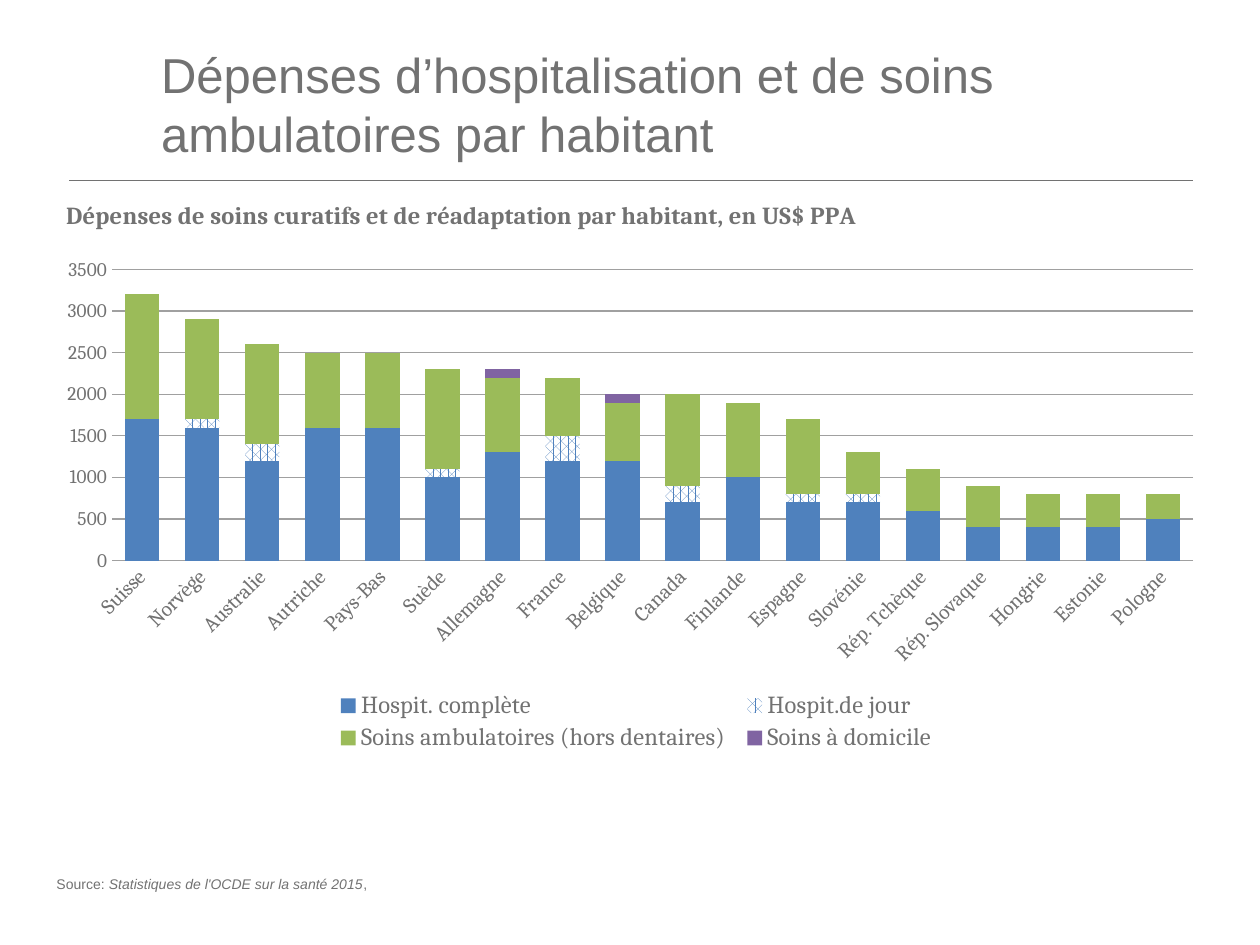
from lxml.etree import SubElement
from pptx import Presentation
from pptx.chart.data import CategoryChartData
from pptx.dml.color import RGBColor
from pptx.enum.chart import XL_CHART_TYPE, XL_LEGEND_POSITION, XL_TICK_MARK
from pptx.enum.dml import MSO_PATTERN
from pptx.enum.shapes import MSO_CONNECTOR
from pptx.enum.text import MSO_ANCHOR, MSO_AUTO_SIZE
from pptx.oxml import parse_xml
from pptx.oxml.ns import nsdecls, qn
from pptx.util import Inches, Pt

GREY = RGBColor(0x72, 0x72, 0x72)
GRID = RGBColor(0xA0, 0xA0, 0xA0)
WHITE = RGBColor(0xFF, 0xFF, 0xFF)
BLUE = RGBColor(0x4F, 0x81, 0xBD)
GREEN = RGBColor(0x9B, 0xBB, 0x59)
PURPLE = RGBColor(0x80, 0x64, 0xA2)

LEFT, TOP, WIDE, HIGH = 0.35, 1.48, 9.3, 4.54  # chart frame, inches

ROWS = [
    # country, full stay, day stay, outpatient, home care
    ("Suisse", 1700, 0, 1500, 0),
    ("Norvège", 1600, 100, 1200, 0),
    ("Australie", 1200, 200, 1200, 0),
    ("Autriche", 1600, 0, 900, 0),
    ("Pays-Bas", 1600, 0, 900, 0),
    ("Suède", 1000, 100, 1200, 0),
    ("Allemagne", 1300, 0, 900, 100),
    ("France", 1200, 300, 700, 0),
    ("Belgique", 1200, 0, 700, 100),
    ("Canada", 700, 200, 1100, 0),
    ("Finlande", 1000, 0, 900, 0),
    ("Espagne", 700, 100, 900, 0),
    ("Slovénie", 700, 100, 500, 0),
    ("Rép. Tchèque", 600, 0, 500, 0),
    ("Rép. Slovaque", 400, 0, 500, 0),
    ("Hongrie", 400, 0, 400, 0),
    ("Estonie", 400, 0, 400, 0),
    ("Pologne", 500, 0, 300, 0),
]
NAMES = ["Hospit. complète", "Hospit.de jour",
         "Soins ambulatoires (hors dentaires)", "Soins à domicile"]


def style(font, size, face="Cambria", bold=False):
    font.size, font.name, font.bold = Pt(size), face, bold
    font.color.rgb = GREY


def place(part, after, x, y, w=None, h=None):
    """Lay out a chart part at a spot given in inches on the slide."""
    for old in part.findall(qn("c:layout")):
        part.remove(old)
    layout = parse_xml(f'<c:layout {nsdecls("c")}/>')
    manual = SubElement(layout, qn("c:manualLayout"))
    if part.tag == qn("c:plotArea"):
        SubElement(manual, qn("c:layoutTarget")).set("val", "inner")
    for key in "xy":
        SubElement(manual, qn(f"c:{key}Mode")).set("val", "edge")
    share = {"x": (x - LEFT) / WIDE, "y": (y - TOP) / HIGH}
    if w:
        share.update(w=w / WIDE, h=h / HIGH)
    for key, val in share.items():
        SubElement(manual, qn(f"c:{key}")).set("val", str(val))
    if after is None:
        part.insert(0, layout)
    else:
        part.find(qn(after)).addnext(layout)


prs = Presentation()
prs.slide_width, prs.slide_height = Inches(10), Inches(7.5)
slide = prs.slides.add_slide(prs.slide_layouts[6])
shapes = slide.shapes

# Heading and rule
rule = shapes.add_connector(MSO_CONNECTOR.STRAIGHT, Inches(0.55), Inches(1.43),
                            Inches(9.47), Inches(1.43))
rule.line.color.rgb, rule.line.width = GREY, Pt(0.5)
SubElement(rule._element.spPr, qn("a:effectLst"))

head = shapes.add_textbox(Inches(1.18), Inches(0.26), Inches(8.11), Inches(1.12))
frame = head.text_frame
frame.word_wrap, frame.vertical_anchor = True, MSO_ANCHOR.MIDDLE
frame.text = "Dépenses d’hospitalisation et de soins ambulatoires par habitant"
style(frame.paragraphs[0].runs[0].font, 28, "Arial")

# Stacked columns
data = CategoryChartData(number_format="0")
data.categories = [row[0] for row in ROWS]
for col, name in enumerate(NAMES, 1):
    data.add_series(name, [row[col] for row in ROWS])
chart = shapes.add_chart(XL_CHART_TYPE.COLUMN_STACKED, Inches(LEFT), Inches(TOP),
                         Inches(WIDE), Inches(HIGH), data).chart
style(chart.font, 10)

plot = chart.plots[0]
plot.gap_width, plot.overlap, plot.vary_by_categories = 75, 100, False
for series, color in zip(plot.series, (BLUE, None, GREEN, PURPLE)):
    fill = series.format.fill
    if color is None:
        fill.patterned()
        fill.pattern = MSO_PATTERN.PERCENT_60
        fill.fore_color.rgb, fill.back_color.rgb = BLUE, WHITE
    else:
        fill.solid()
        fill.fore_color.rgb = color

chart.has_title = True
title = chart.chart_title
title.include_in_layout = False
title.text_frame.text = "Dépenses de soins curatifs et de réadaptation par habitant, en US$ PPA"
style(title.text_frame.paragraphs[0].runs[0].font, 14, bold=True)

cats, vals = chart.category_axis, chart.value_axis
for axis, size in ((cats, 12), (vals, 11)):
    axis.major_tick_mark = axis.minor_tick_mark = XL_TICK_MARK.NONE
    style(axis.tick_labels.font, size)
cats.format.line.color.rgb = GRID
cats._element.find(qn("c:txPr")).find(qn("a:bodyPr")).set("rot", "-2700000")
vals.minimum_scale, vals.maximum_scale, vals.major_unit = 0, 3500, 500
vals.tick_labels.number_format = "0"
vals.tick_labels.number_format_is_linked = False
vals.format.line.fill.background()
vals.major_gridlines.format.line.color.rgb = GRID
vals.major_gridlines.format.line.width = Pt(0.75)

chart.has_legend = True
legend = chart.legend
legend.position, legend.include_in_layout = XL_LEGEND_POSITION.BOTTOM, False
style(legend.font, 14)

place(title._element, "c:tx", 0.49, 1.55)
place(plot._element.getparent(), None, 0.89, 2.14, 8.58, 2.31)
place(legend._element, "c:legendPos", 2.6, 5.46, 4.9, 0.54)

# Source line
note = shapes.add_textbox(Inches(0.35), Inches(6.9), Inches(2.73), Inches(0.24))
note.text_frame.word_wrap = False
note.text_frame.auto_size = MSO_AUTO_SIZE.SHAPE_TO_FIT_TEXT
para = note.text_frame.paragraphs[0]
for text, slant in (("Source: ", False),
                    ("Statistiques de l'OCDE sur la santé 2015", True), (",", False)):
    run = para.add_run()
    run.text = text
    style(run.font, 8, "Arial")
    run.font.italic = slant

prs.save("out.pptx")
